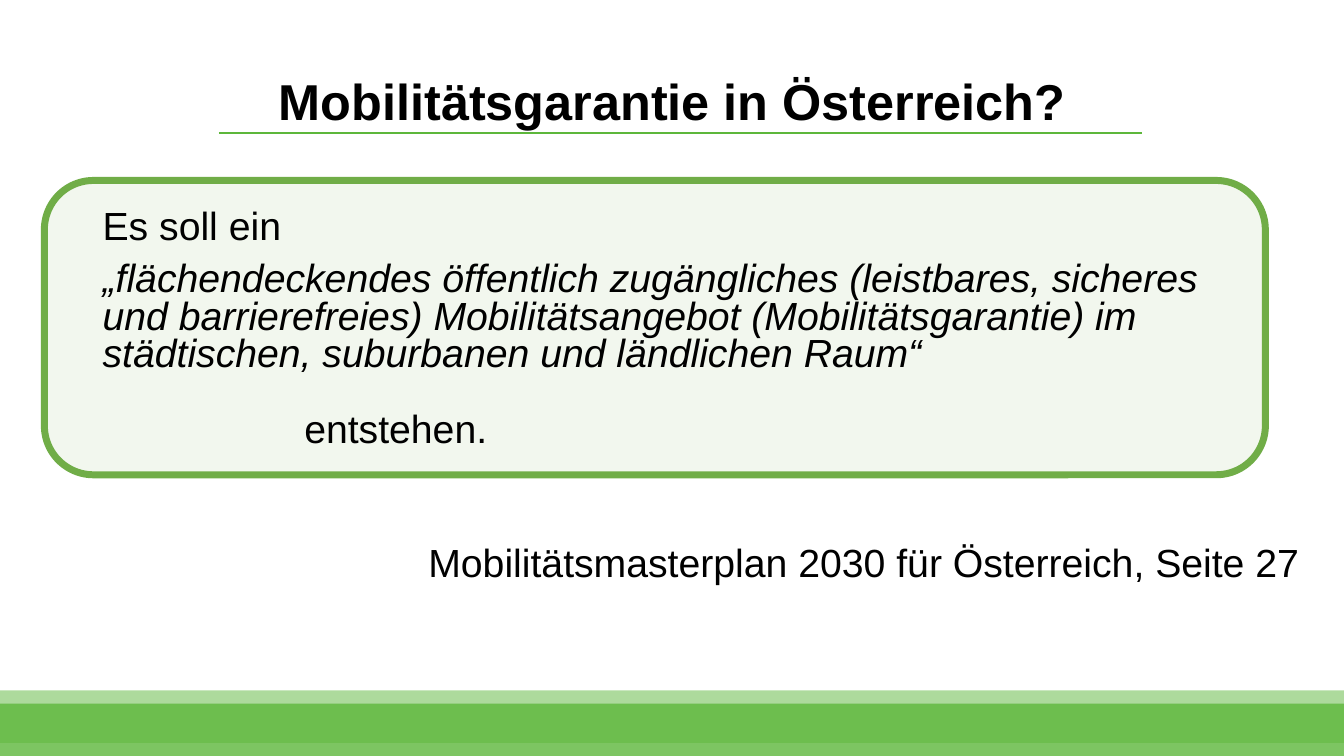
import pptx
import pptx.dml.color
import pptx.enum.shapes
import pptx.enum.text
import pptx.oxml
import pptx.oxml.ns
import pptx.util

WIDTH, HEIGHT = 13.33, 7.5
GREEN, CARD_GREEN, BLACK = "5DB73B", "70AD47", "000000"
SHAPES = pptx.enum.shapes.MSO_SHAPE
ALIGN = pptx.enum.text.PP_ALIGN
ANCHOR = pptx.enum.text.MSO_ANCHOR


def color(hex_string):
    return pptx.dml.color.RGBColor.from_string(hex_string)


class SlideBuilder:
    """Holds the style and the current slide; boxes are shares of the slide."""

    font = "Arial"
    body_size = 28
    title_size = 36

    def __init__(self, presentation):
        self.width = presentation.slide_width
        self.height = presentation.slide_height
        self.slide = presentation.slides.add_slide(presentation.slide_layouts[5])

    def scale(self, left, top, width, height):
        return (round(left * self.width), round(top * self.height),
                round(width * self.width), round(height * self.height))

    def format_runs(self, paragraph, size, bold=False, italic=False):
        for run in paragraph.runs:
            run.font.name = self.font
            run.font.size = pptx.util.Pt(size)
            run.font.bold = bold
            run.font.italic = italic
            run.font.color.rgb = color(BLACK)

    def title(self, text, box):
        shape = self.slide.shapes.title
        shape.left, shape.top, shape.width, shape.height = self.scale(*box)
        frame = shape.text_frame
        frame.text = text
        frame.auto_size = pptx.enum.text.MSO_AUTO_SIZE.NONE
        frame.vertical_anchor = ANCHOR.MIDDLE
        paragraph = frame.paragraphs[0]
        paragraph.alignment = ALIGN.CENTER
        paragraph.line_spacing = 0.9
        self.format_runs(paragraph, self.title_size, bold=True)

    def rule(self, left, right, top, line_color):
        start_x, y, end_x, _ = self.scale(left, top, right, 0)
        line = self.slide.shapes.add_connector(
            pptx.enum.shapes.MSO_CONNECTOR.STRAIGHT, start_x, y, end_x, y)
        line.line.color.rgb = color(line_color)
        line.line.width = pptx.util.Pt(1)
        pptx.oxml.ns.qn("a:effectLst")
        line._element.spPr.append(pptx.oxml.parse_xml(
            f'<a:effectLst {pptx.oxml.ns.nsdecls("a")}/>'))

    def panel(self, kind, box, fill_color, opacity, line_width=0):
        """Add a see-through shape; opacity is in percent."""
        shape = self.slide.shapes.add_shape(kind, *self.scale(*box))
        shape.shadow.inherit = False
        shape.fill.solid()
        shape.fill.fore_color.rgb = color(fill_color)
        fill = shape._element.spPr.find(pptx.oxml.ns.qn("a:solidFill"))
        fill[0].append(pptx.oxml.parse_xml(
            f'<a:alpha {pptx.oxml.ns.nsdecls("a")} val="{opacity * 1000}"/>'))
        if line_width:
            shape.line.color.rgb = color(fill_color)
            shape.line.width = pptx.util.Pt(line_width)
        else:
            shape.line.fill.background()

    def text(self, box):
        """Add an empty wrapping text box and return its frame."""
        frame = self.slide.shapes.add_textbox(*self.scale(*box)).text_frame
        frame.word_wrap = True
        return frame

    def quote(self, lines, box):
        """Add paragraphs given as (text, italic, space before, indent in inches)."""
        frame = self.text(box)
        frame.text = "\n".join(line[0] for line in lines)
        for paragraph, (_, italic, space, indent) in zip(frame.paragraphs, lines):
            paragraph.line_spacing = 0.8
            paragraph.space_before = pptx.util.Pt(space)
            if indent:
                paragraph._p.get_or_add_pPr().set(
                    "marL", str(pptx.util.Inches(indent)))
            self.format_runs(paragraph, self.body_size, italic=italic)

    def caption(self, text, box):
        frame = self.text(box)
        frame.text = text
        self.format_runs(frame.paragraphs[0], self.body_size)


def share(left, top, width, height):
    """Turn inches into shares of the slide."""
    return left / WIDTH, top / HEIGHT, width / WIDTH, height / HEIGHT


def main():
    presentation = pptx.Presentation()
    presentation.slide_width = pptx.util.Inches(WIDTH)
    presentation.slide_height = pptx.util.Inches(HEIGHT)
    builder = SlideBuilder(presentation)

    builder.title("Mobilitätsgarantie in Österreich?", share(0.92, 0.31, 11.5, 1.45))
    builder.rule(2.17 / WIDTH, 11.33 / WIDTH, 1.32 / HEIGHT, GREEN)
    for top, opacity in ((6.85, 50), (6.98, 80)):
        builder.panel(SHAPES.RECTANGLE, share(0, top, WIDTH, 0.52), GREEN, opacity)
    builder.panel(SHAPES.ROUNDED_RECTANGLE, share(0.44, 1.79, 12.11, 2.92),
                  CARD_GREEN, 9, line_width=5)
    builder.quote([
        ("Es soll ein", False, 10, 0),
        ("„flächendeckendes öffentlich zugängliches (leistbares, sicheres und "
         "barrierefreies) Mobilitätsangebot (Mobilitätsgarantie) im städtischen, "
         "suburbanen und ländlichen Raum“", True, 10, 0),
        ("entstehen.", False, 27, 2),
    ], share(0.92, 2.04, 11.6, 2.6))
    builder.caption("Mobilitätsmasterplan 2030 für Österreich, Seite 27",
                    share(4.15, 5.29, 8.98, 0.88))
    presentation.save("out.pptx")


if __name__ == "__main__":
    main()
